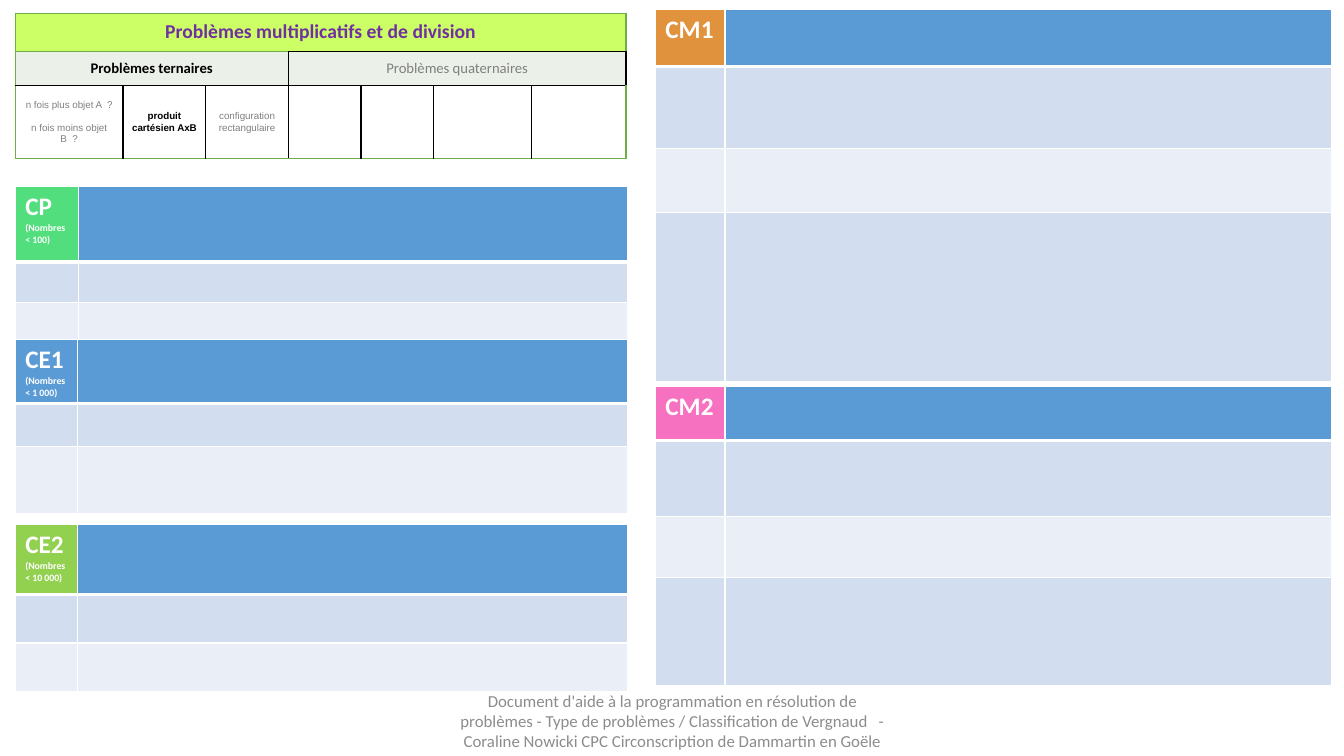
from dataclasses import dataclass

from lxml.etree import SubElement
from pptx import Presentation
from pptx.dml.color import RGBColor as RGB
from pptx.enum.text import MSO_ANCHOR as ANCHOR, PP_ALIGN as ALIGN
from pptx.oxml.ns import qn
from pptx.util import Inches, Pt


@dataclass(frozen=True)
class Theme:
    """Colours, fonts and type sizes of the slide."""
    font: str = "Calibri"
    small_font: str = "Arial"
    black: str = "000000"
    white: str = "FFFFFF"
    grey: str = "808080"
    footer: str = "8C8C8C"
    purple: str = "7030A0"
    lime: str = "CCFF66"
    pale: str = "EBF1E9"
    green: str = "70AD47"
    blue: str = "5B9BD5"
    bands: tuple = ("D2DEEF", "EAEFF7")
    level_size: float = 18
    title_size: float = 14
    footer_size: float = 12
    group_size: float = 10.5
    small_size: float = 7


T = Theme()
WIDTH, HEIGHT = Inches(13.33), Inches(7.5)
LEFT, LEFT_W = 1.13, 45.54
RIGHT, RIGHT_W = 48.76, 50.34
TYPE_COLS = (8.03, 6.15, 6.15, 5.4, 5.4, 7.28, 7.05)
TYPE_ROWS = (5.07, 4.53, 9.6)
LEVELS = (
    ("CP", "(Nombres < 100)", "52DE7D", LEFT, 24.67, LEFT_W, 4.73, (10, 5.07, 5.07)),
    ("CE1", "(Nombres < 1 000)", T.blue, LEFT, 44.93, LEFT_W, 4.65, (8, 5.73, 8.8)),
    ("CE2", "(Nombres < 10 000)", "92D050", LEFT, 69.33, LEFT_W, 4.65, (9.33, 6.4, 6.4)),
    ("CM1", "", "E0923C", RIGHT, 1.2, RIGHT_W, 5.18, (7.6, 10.8, 8.53, 22.4)),
    ("CM2", "", "F771C1", RIGHT, 51.07, RIGHT_W, 5.18, (7.2, 10, 8.13, 14.27)),
)


def across(share):
    """Turn a percentage of the slide width into a length."""
    return int(WIDTH * share / 100)


def down(share):
    """Turn a percentage of the slide height into a length."""
    return int(HEIGHT * share / 100)


def write(tf, text, *, size, color, font=T.font, bold=False, align=ALIGN.LEFT,
          line=None, before=None):
    """Add one formatted paragraph, filling the first one if it is empty."""
    p = tf.add_paragraph() if tf.text else tf.paragraphs[0]
    p.alignment = align
    if line:
        p.line_spacing = line
    if before:
        p.space_before = Pt(before)
    r = p.add_run()
    r.text = text
    r.font.name, r.font.size, r.font.bold = font, Pt(size), bold
    r.font.color.rgb = RGB.from_string(color)


def style_cell(cell, fill, borders):
    """Set the borders, given as side to colour and width, and the fill."""
    tc_pr = cell._tc.get_or_add_tcPr()
    for side in "LRTB":
        color, width = borders[side]
        ln = SubElement(tc_pr, qn(f"a:ln{side}"), w=str(Pt(width)))
        SubElement(SubElement(ln, qn("a:solidFill")), qn("a:srgbClr"), val=color)
    cell.fill.solid()
    cell.fill.fore_color.rgb = RGB.from_string(fill)


def add_grid(slide, left, top, cols, rows):
    """Add a plain table with the given column and row shares."""
    table = slide.shapes.add_table(len(rows), len(cols), across(left), down(top),
                                   across(sum(cols)), down(sum(rows))).table
    table.first_row = table.horz_banding = False
    for column, share in zip(table.columns, cols):
        column.width = across(share)
    for row, share in zip(table.rows, rows):
        row.height = down(share)
    return table


def type_borders(row, col):
    """Return green outer edges and black inner ones for a type cell."""
    last_row, last_col = len(TYPE_ROWS) - 1, len(TYPE_COLS) - 1
    green = {"L": col == 0, "R": col == last_col,
             "T": row == 1 and col < 3, "B": row == last_row}
    return {side: (T.green if row == 0 or on else T.black, 1)
            for side, on in green.items()}


def middle_cell(cell, inset):
    """Centre a cell vertically with narrow side margins and return its text."""
    cell.vertical_anchor = ANCHOR.MIDDLE
    cell.margin_left = cell.margin_right = Inches(inset)
    cell.margin_top = cell.margin_bottom = 0
    return cell.text_frame


def add_types(slide):
    """Add the table that classifies the problems."""
    table = add_grid(slide, LEFT, 1.73, TYPE_COLS, TYPE_ROWS)
    for i, fill in enumerate((T.lime, T.pale, T.white)):
        for j in range(len(TYPE_COLS)):
            style_cell(table.cell(i, j), fill, type_borders(i, j))
    for row, first, last in ((0, 0, 6), (1, 0, 2), (1, 3, 6)):
        table.cell(row, first).merge(table.cell(row, last))

    write(table.cell(0, 0).text_frame, "Problèmes multiplicatifs et de division",
          size=T.title_size, color=T.purple, bold=True, align=ALIGN.CENTER, line=1.07)
    for col, text, color, bold in ((0, "Problèmes ternaires", T.black, True),
                                   (3, "Problèmes quaternaires", T.grey, False)):
        write(middle_cell(table.cell(1, col), 0.07), text, size=T.group_size,
              color=color, bold=bold, align=ALIGN.CENTER)
    kinds = (("n fois plus objet A  ?", "n fois moins objet B  ?"),
             ("produit cartésien AxB",), ("configuration rectangulaire",))
    for col, lines in enumerate(kinds):
        tf = middle_cell(table.cell(2, col), 0.06)
        current = col == 1
        for n, text in enumerate(lines):
            write(tf, text, size=T.small_size, font=T.small_font, bold=current,
                  color=T.black if current else T.grey, align=ALIGN.CENTER,
                  line=1.07, before=8 * n)


def add_level(slide, name, note, color, left, top, width, label_w, rows):
    """Add the table of one school level."""
    table = add_grid(slide, left, top, (label_w, width - label_w), rows)
    for i in range(len(rows)):
        borders = {side: (T.white, 1) for side in "LRTB"}
        if i == 0:
            borders["B"] = (T.white, 3)
        if i == 1:
            borders["T"] = (T.white, 3)
        fills = (color, T.blue) if i == 0 else (T.bands[(i - 1) % 2],) * 2
        for j, fill in enumerate(fills):
            style_cell(table.cell(i, j), fill, borders)
    tf = table.cell(0, 0).text_frame
    write(tf, name, size=T.level_size, color=T.white, bold=True)
    if note:
        write(tf, note, size=T.small_size, color=T.white, bold=True)


def add_footer(slide):
    """Add the centred credit line at the foot of the slide."""
    tf = slide.shapes.add_textbox(across(33.16), down(92.67),
                                  across(33.76), down(5.33)).text_frame
    tf.word_wrap = True
    tf.vertical_anchor = ANCHOR.MIDDLE
    write(tf, "Document d'aide à la programmation en résolution de problèmes - "
          "Type de problèmes / Classification de Vergnaud   - "
          "Coraline Nowicki CPC Circonscription de Dammartin en Goële",
          size=T.footer_size, color=T.footer, align=ALIGN.CENTER)


def main():
    """Build the slide and save it."""
    prs = Presentation()
    prs.slide_width, prs.slide_height = WIDTH, HEIGHT
    slide = prs.slides.add_slide(prs.slide_layouts[6])
    add_footer(slide)
    add_types(slide)
    for level in LEVELS:
        add_level(slide, *level)
    prs.save("out.pptx")


if __name__ == "__main__":
    main()
